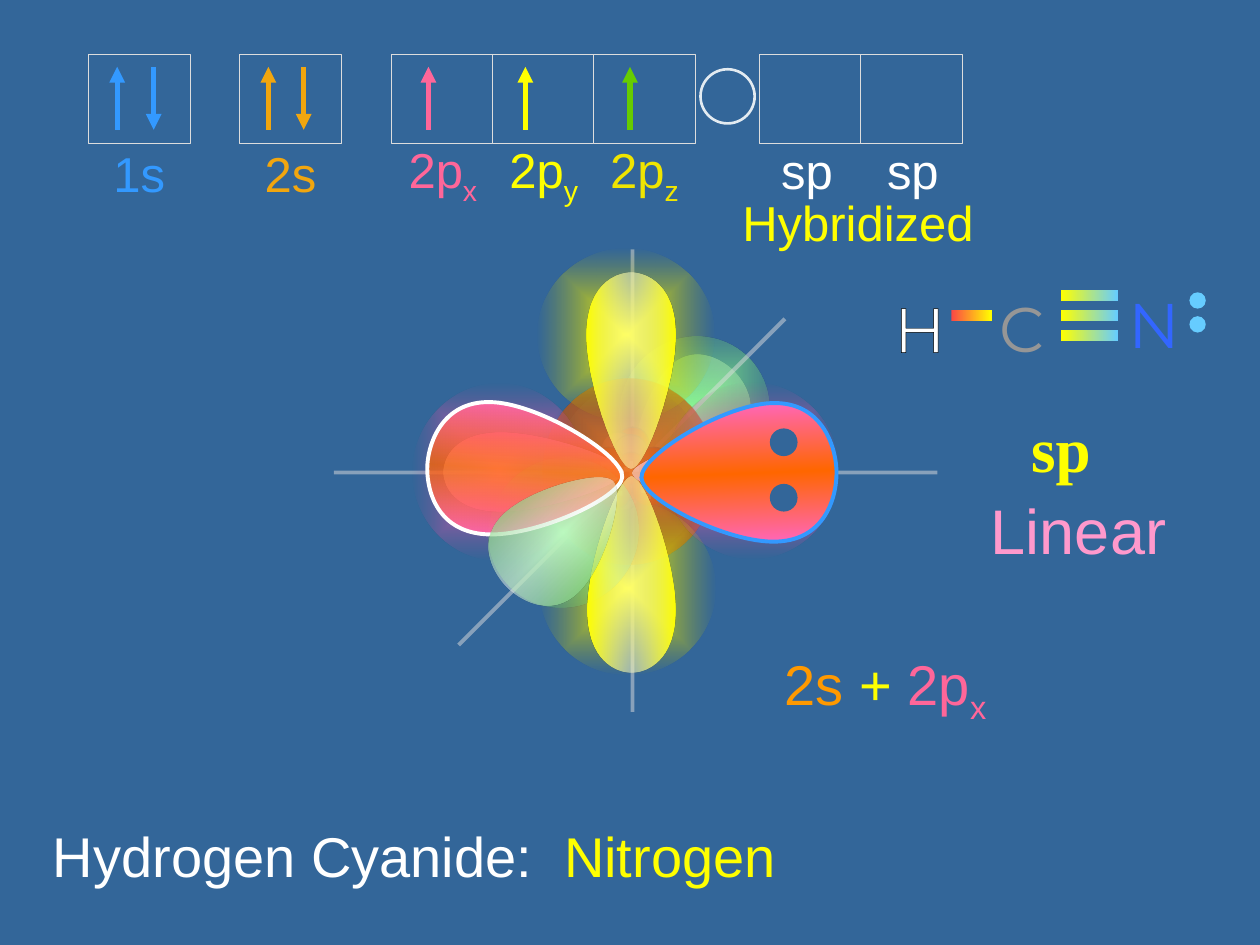
"""Build the slide on nitrogen's sp hybridization in hydrogen cyanide."""
from lxml import etree
from pptx import Presentation
from pptx.dml.color import RGBColor
from pptx.enum.shapes import MSO_CONNECTOR, MSO_SHAPE
from pptx.enum.text import MSO_ANCHOR, MSO_AUTO_SIZE, PP_ALIGN
from pptx.oxml import parse_xml
from pptx.oxml.ns import nsdecls, qn
from pptx.util import Inches, Pt

OVAL, RECT, PLUS = MSO_SHAPE.OVAL, MSO_SHAPE.RECTANGLE, MSO_SHAPE.CROSS
STRAIGHT, NO_FIT = MSO_CONNECTOR.STRAIGHT, MSO_AUTO_SIZE.NONE
LEFT, CENTER = PP_ALIGN.LEFT, PP_ALIGN.CENTER
TOP, MIDDLE = MSO_ANCHOR.TOP, MSO_ANCHOR.MIDDLE
BACK, WHITE, BLACK, GRAY, PALE, CARBON = map(
    RGBColor.from_string, ("336699", "FFFFFF", "000000", "DDDDDD", "E3EBF1", "969696"))
BLUE, DEEP_BLUE, SKY, DARK_SKY = map(
    RGBColor.from_string, ("3399FF", "3366FF", "66CCFF", "4992B6"))
AMBER, LIGHT_ORANGE, ORANGE, RUST, RED = map(
    RGBColor.from_string, ("F1A60F", "FF9900", "FF6600", "B64900", "FC4646"))
ROSE, PINK, MAGENTA, PLUM, BLUSH = map(
    RGBColor.from_string, ("FF6699", "FF99CC", "FF66CC", "B64992", "FFF2F9"))
YELLOW, GOLD, OLIVE, CREAM = map(
    RGBColor.from_string, ("FFFF00", "F0E500", "B6B600", "FFFFCA"))
GREEN, LIME, MINT, MOSS, MIST = map(
    RGBColor.from_string, ("00AC00", "66CC00", "8BFD93", "63B569", "F1F7F1"))
PROTON, DARK_PROTON, NEUTRON, DARK_NEUTRON = map(
    RGBColor.from_string, ("E35353", "A23B3B", "A1AEE7", "737CA5"))
LOBE_CURVES = (((0, 34), (43, 0), (68, 0)), ((94, 0), (100, 33), (100, 50)),
               ((100, 67), (94, 100), (68, 100)), ((43, 100), (0, 66), (0, 50)))


def set_gradient(sp, stops, angle=None):
    """Fill with (position, colour, opacity) stops, radial unless an angle is given."""
    sp.fill.gradient()
    old = sp._element.spPr.find(qn("a:gradFill"))
    marks = "".join(f'<a:gs pos="{pos * 1000}"><a:srgbClr val="{color}">'
                    f'<a:alpha val="{alpha * 1000}"/></a:srgbClr></a:gs>'
                    for pos, color, alpha in stops)
    way = f'<a:lin ang="{(angle or 0) * 60000}" scaled="1"/>'
    if angle is None:
        way = '<a:path path="shape"><a:fillToRect l="50000" t="50000" r="50000" b="50000"/></a:path>'
    old.getparent().replace(old, parse_xml(
        f'<a:gradFill {nsdecls("a")} rotWithShape="1"><a:gsLst>{marks}</a:gsLst>{way}</a:gradFill>'))


def finish(sp, fill=None, stops=None, angle=None, line=None, width=0.75):
    """Set fill and outline and drop the shadow."""
    sp.shadow.inherit = False
    if stops:
        set_gradient(sp, stops, angle)
    elif fill is not None:
        sp.fill.solid()
        sp.fill.fore_color.rgb = fill
    else:
        sp.fill.background()
    if line is None:
        sp.line.fill.background()
    else:
        sp.line.color.rgb, sp.line.width = line, Pt(width)
    return sp


def add_shape(s, kind, x, y, w, h, rotation=0, **style):
    """Add a preset shape."""
    sp = s.shapes.add_shape(kind, Inches(x), Inches(y), Inches(w), Inches(h))
    sp.rotation = rotation
    return finish(sp, **style)


def add_lobe(s, x, y, w, h, rotation, edge, middle, opacity, **style):
    """Add a curved orbital lobe whose tip is on the left before turning."""
    builder = s.shapes.build_freeform(Inches(x), Inches(y))
    builder.add_line_segments([(Inches(x + w), Inches(y)), (Inches(x + w), Inches(y + h))])
    sp = builder.convert_to_shape()
    sp.rotation = rotation
    curves = "".join("<a:cubicBezTo>" + "".join(f'<a:pt x="{px}" y="{py}"/>' for px, py in curve)
                     + "</a:cubicBezTo>" for curve in LOBE_CURVES)
    old = sp._element.spPr.find(".//" + qn("a:path"))
    old.getparent().replace(old, parse_xml(
        f'<a:path {nsdecls("a")} w="100" h="100"><a:moveTo><a:pt x="0" y="50"/></a:moveTo>'
        f'{curves}<a:close/></a:path>'))
    stops = (0, edge, 100), (50, middle, opacity), (100, edge, 100)
    finish(sp, stops=stops, angle=90, **style)


def add_line(s, x1, y1, x2, y2, color, width, opacity=100, arrow=False):
    """Add a straight line, translucent or with an arrowhead on request."""
    sp = s.shapes.add_connector(STRAIGHT, Inches(x1), Inches(y1), Inches(x2), Inches(y2))
    sp.line.color.rgb, sp.line.width = color, Pt(width)
    ln = sp._element.spPr.find(qn("a:ln"))
    etree.SubElement(ln.find(".//" + qn("a:srgbClr")), qn("a:alpha"), val=str(opacity * 1000))
    if arrow:
        etree.SubElement(ln, qn("a:tailEnd"), type="triangle")
    etree.SubElement(sp._element.spPr, qn("a:effectLst"))


def write(sp, *runs, size=28, font="Arial", bold=False, align=CENTER, anchor=TOP, wrap=True,
          margins=(0.1, 0.05), before=3.5, outline=None, tab=None):
    """Write (text, colour) runs, with a third item True for a subscript."""
    tf = sp.text_frame
    tf.auto_size, tf.word_wrap, tf.vertical_anchor = NO_FIT, wrap, anchor
    tf.margin_left = tf.margin_right = Inches(margins[0])
    tf.margin_top = tf.margin_bottom = Inches(margins[1])
    p = tf.paragraphs[0]
    p.alignment, p.space_before = align, Pt(before)
    if tab:
        stops = etree.SubElement(p._p.get_or_add_pPr(), qn("a:tabLst"))
        etree.SubElement(stops, qn("a:tab"), pos=str(Inches(tab)), algn="l")
    for text, color, *sub in runs:
        r = p.add_run()
        r.text = text
        r.font.size, r.font.name, r.font.bold = Pt(size), font, bold
        r.font.color.rgb = color
        if sub:
            r.font._element.set("baseline", "-25000")
        if outline:
            r.font._element.insert(0, parse_xml(
                f'<a:ln {nsdecls("a")} w="{Pt(outline[1])}"><a:solidFill>'
                f'<a:srgbClr val="{outline[0]}"/></a:solidFill></a:ln>'))


def add_text(s, x, y, w, h, *runs, **style):
    """Add a text box."""
    write(s.shapes.add_textbox(Inches(x), Inches(y), Inches(w), Inches(h)), *runs, **style)


def add_orbital(s, x, *label, up, down=None, arrow_color=None):
    """Add an orbital box with its label and electron arrows."""
    sp = add_shape(s, RECT, x, 1.02, 0.81, 0.71, fill=BACK)
    write(sp, *label, anchor=MIDDLE, wrap=False, margins=(0, 0.05))
    add_shape(s, RECT, x, 0.43, 0.81, 0.71, fill=BACK, line=GRAY)
    color = arrow_color or label[0][1]
    add_line(s, up, 1.03, up, 0.53, color, 3, arrow=True)
    if down:
        add_line(s, down, 0.53, down, 1.03, color, 3, arrow=True)


def add_ball(s, x, y, w, h, inner, outer, opacity=(100, 0), rotation=0, line=None):
    """Add a ball or cloud with a radial gradient."""
    add_shape(s, OVAL, x, y, w, h, rotation, line=line,
              stops=((0, inner, opacity[0]), (100, outer, opacity[1])))


def add_neutron(s, x, y):
    """Add a neutron."""
    add_ball(s, x, y, 0.27, 0.27, NEUTRON, DARK_NEUTRON, (100, 100), line=BACK)


def add_proton(s, x, y):
    """Add a proton with its plus sign."""
    add_ball(s, x, y, 0.26, 0.26, PROTON, DARK_PROTON, (100, 100), line=BACK)
    add_shape(s, PLUS, x + 0.07, y + 0.07, 0.12, 0.13, fill=WHITE).adjustments[0] = 0.39


def add_model(s):
    """Draw axes, nucleus, electron clouds and orbital lobes."""
    add_lobe(s, 4.91, 2.94, 1.07, 0.77, 315, GREEN, MIST, 48)
    add_ball(s, 4.93, 2.66, 1.17, 1.21, MINT, MOSS, rotation=45)
    for ends in ((3.64, 5.12, 6.23, 2.53), (2.65, 3.75, 7.44, 3.75), (5.02, 5.65, 5.02, 1.98)):
        add_line(s, *ends, GRAY, 2.25, opacity=50)
    for add, x, y in (
            (add_proton, 4.89, 3.39), (add_neutron, 4.77, 3.43), (add_neutron, 4.81, 3.78),
            (add_neutron, 5.03, 3.68), (add_neutron, 4.87, 3.45), (add_proton, 4.7, 3.55),
            (add_proton, 5.06, 3.55), (add_neutron, 4.87, 3.7), (add_proton, 4.88, 3.59),
            (add_proton, 5.02, 3.76), (add_proton, 4.75, 3.78)):
        add(s, x, y)
    add_ball(s, 4.41, 3.06, 1.18, 1.35, SKY, DARK_SKY, (75, 0))
    add_ball(s, 4.31, 3.01, 1.37, 1.47, ORANGE, RUST, (83, 60))
    for x, y, inner, outer, rotation in (
            (4.28, 3.98, YELLOW, OLIVE, 0), (4.27, 1.97, YELLOW, OLIVE, 0),
            (3.26, 3.06, MAGENTA, PLUM, 90), (5.27, 3.05, MAGENTA, PLUM, 90)):
        add_ball(s, x, y, 1.4, 1.37, inner, outer, rotation=rotation)
    add_ball(s, 3.89, 3.62, 1.17, 1.21, MINT, MOSS, rotation=45)
    for y, rotation in ((4.21, 90), (2.59, 270)):
        add_lobe(s, 4.23, y, 1.56, 0.7, rotation, YELLOW, CREAM, 51)
    for x, y, rotation in ((5.02, 3.44, 0), (3.52, 3.43, 180)):
        add_lobe(s, x, y, 1.43, 0.63, rotation, MAGENTA, BLUSH, 49)
    add_lobe(s, 3.39, 3.21, 1.55, 1.05, 183.8, MAGENTA, ORANGE, 76, line=WHITE, width=2.25)
    add_lobe(s, 5.09, 3.21, 1.55, 1.1, 357.7, MAGENTA, ORANGE, 100, line=BLUE, width=2.25)
    add_lobe(s, 3.85, 3.81, 1.19, 0.86, 135, GREEN, MIST, 48)
    for y in (3.4, 3.84):
        add_shape(s, OVAL, 6.11, y, 0.22, 0.22, fill=BACK)


def add_orbital_row(s):
    """Draw the row of atomic and hybrid orbitals."""
    add_orbital(s, 0.7, ("1s", BLUE), up=0.93, down=1.22)
    add_orbital(s, 1.9, ("2s", AMBER), up=2.13, down=2.41)
    for i, (axis, color, up, arrow) in enumerate((
            ("x", ROSE, 3.4, ROSE), ("y", YELLOW, 4.17, YELLOW), ("z", GOLD, 5, LIME))):
        add_orbital(s, 3.11 + 0.8 * i, ("2p", color), (axis, color, True),
                    up=up, arrow_color=arrow)
    add_text(s, 6.02, 1.07, 1.63, 0.57, ("sp\tsp", WHITE), align=LEFT, margins=(0.18, 0.05), tab=0.84)
    for x in (6.03, 6.83):
        add_shape(s, RECT, x, 0.43, 0.81, 0.71, fill=BACK, line=GRAY)
    add_shape(s, OVAL, 5.56, 0.55, 0.43, 0.43, line=PALE, width=1.5)
    add_text(s, 5.61, 1.53, 2.4, 0.55, ("Hybridized", YELLOW), margins=(0.1, 0))


def add_formula(s):
    """Draw the structural formula of hydrogen cyanide."""
    for x, y, letter, color, outline in (
            (7.1, 2.25, "H", WHITE, (BLACK, 0.75)), (7.91, 2.25, "C", CARBON, (YELLOW, 2)),
            (8.96, 2.22, "N", DEEP_BLUE, None)):
        add_text(s, x, y, 0.4, 0.51, (letter, color), size=36, font="Montserrat",
                 wrap=False, before=0, outline=outline)
    for y in (2.32, 2.51):
        add_shape(s, OVAL, 9.44, y, 0.13, 0.13, fill=SKY)
    for x, y, w, start, end in ((8.42, 2.3, 0.45, YELLOW, SKY), (8.42, 2.46, 0.45, YELLOW, SKY),
                                (8.42, 2.62, 0.45, YELLOW, SKY), (7.55, 2.46, 0.32, RED, YELLOW)):
        add_shape(s, RECT, x, y, w, 0.09, angle=0, stops=((0, start, 100), (100, end, 100)))


def main():
    """Build and save the slide."""
    prs = Presentation()
    prs.slide_width, prs.slide_height = Inches(10), Inches(7.5)
    s = prs.slides.add_slide(prs.slide_layouts[5])
    s.background.fill.solid()
    s.background.fill.fore_color.rgb = BACK
    sp = s.shapes.title
    sp.left, sp.top, sp.width, sp.height = map(Inches, (0.32, 6.47, 6.55, 0.63))
    write(sp, ("Hydrogen Cyanide:  ", WHITE), ("Nitrogen", YELLOW), size=32, align=LEFT)
    add_model(s)
    add_orbital_row(s)
    add_formula(s)
    add_text(s, 8, 3.2, 0.84, 0.57, ("sp", YELLOW), size=36, font="Times New Roman",
             bold=True, wrap=False)
    add_text(s, 7.53, 3.85, 2.06, 0.7, ("Linear", PINK), size=36)
    add_text(s, 6.13, 5.11, 3.44, 0.63, ("2s", LIGHT_ORANGE), (" + ", YELLOW),
             ("2p", ROSE), ("x", ROSE, True), size=32, align=LEFT)
    prs.save("out.pptx")


if __name__ == "__main__":
    main()
